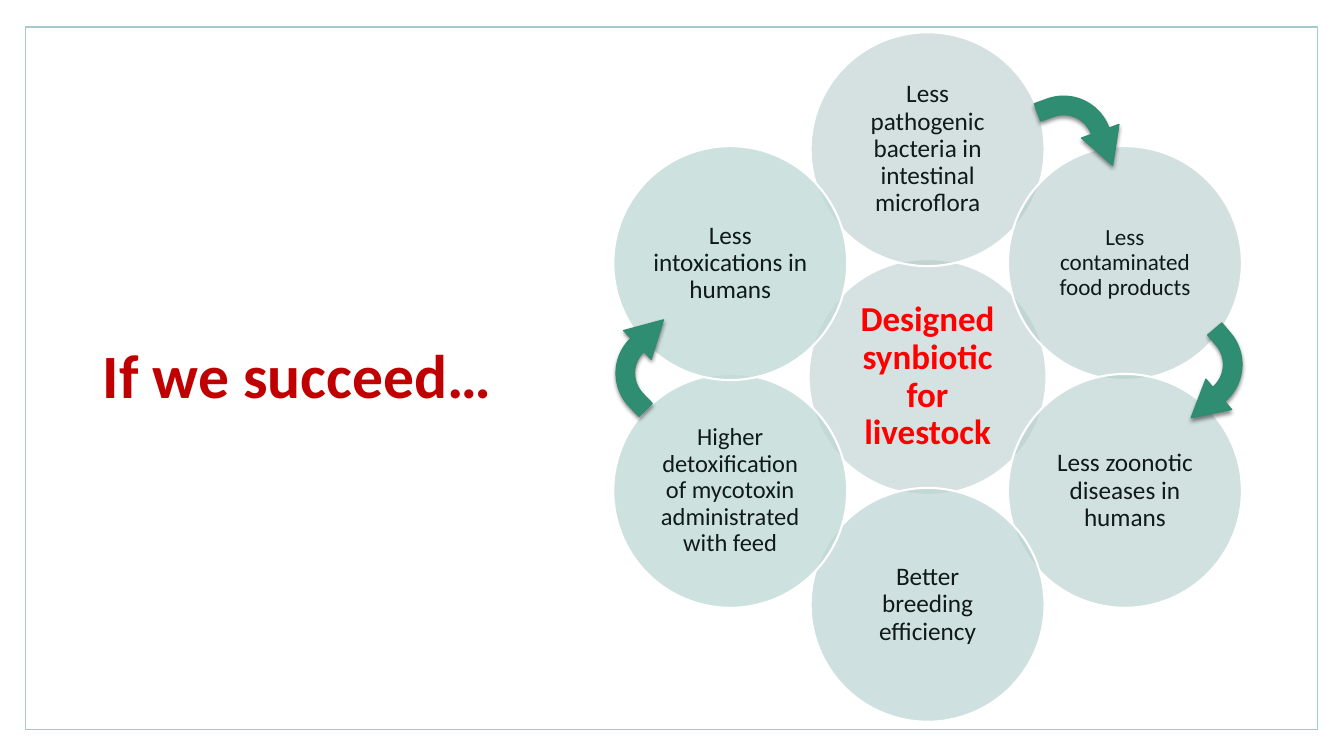
"""Build the slide showing the outcomes of a designed synbiotic for livestock."""
from math import cos, radians, sin

from lxml.etree import SubElement
from pptx import Presentation
from pptx.dml.color import RGBColor
from pptx.enum.shapes import MSO_SHAPE as Preset
from pptx.enum.text import MSO_ANCHOR as Anchor, PP_ALIGN as Align
from pptx.oxml import parse_xml
from pptx.oxml.ns import nsdecls, qn
from pptx.util import Inches, Pt

TITLE = "If we succeed…"
HUB = "Designed synbiotic for livestock"
OUTCOMES = [
    ("Less pathogenic bacteria in intestinal microflora", 18, "B1CAC8"),
    ("Less contaminated food products", 16.5, "B4CDCB"),
    ("Less zoonotic diseases in humans", 18, "B7D1CF"),
    ("Better breeding efficiency", 18, "BAD4D2"),
    ("Higher detoxification of mycotoxin administrated with feed", 17.5, "BDD7D5"),
    ("Less intoxications in humans", 18, "C1DAD8"),
]
ARROWS = [(10.32, 0.94, 70), (11.61, 3.39, 139.8), (5.97, 3.22, 316.1)]
ARROW_BENDS = (0.257, 0.276, 0.5, 0.665)

THEME = {
    "font": "Calibri", "title": "C00000", "title_size": 44,
    "hub": "AEC6C4", "hub_text": "FF0000", "hub_size": 25,
    "text": "0F1A19", "outline": "FFFFFF", "frame": "A6CAC8",
    "arrow": "2F8D72", "arrow_line": "318B71",
}
CENTER_X, CENTER_Y = 9.2, 3.74
RING_RADIUS, PETAL, HUB_SIZE = 2.26, 2.32, (2.36, 2.34)
SHADOW = (
    f'<a:effectLst {nsdecls("a")}><a:outerShdw blurRad="{Pt(3)}" dist="{Pt(2)}" '
    'dir="5400000" rotWithShape="0"><a:srgbClr val="000000">'
    '<a:alpha val="45000"/></a:srgbClr></a:outerShdw></a:effectLst>'
)


def color(name):
    return RGBColor.from_string(name)


def write(frame, words, size, ink, bold, align):
    frame.text = words
    frame.word_wrap = True
    frame.vertical_anchor = Anchor.MIDDLE
    paragraph = frame.paragraphs[0]
    paragraph.alignment = align
    paragraph.line_spacing = 0.9
    font = paragraph.runs[0].font
    font.name, font.size, font.bold = THEME["font"], Pt(size), bold
    font.color.rgb = color(ink)


def add_outlined(slide, preset, box, line, width):
    outlined = slide.shapes.add_shape(preset, *map(Inches, box))
    outlined.shadow.inherit = False
    outlined.line.color.rgb = color(line)
    outlined.line.width = Pt(width)
    return outlined


def add_circle(slide, x, y, size, fill, opacity, words, type_size, ink, bold=False):
    width, height = size
    box = (x - width / 2, y - height / 2, width, height)
    circle = add_outlined(slide, Preset.OVAL, box, THEME["outline"], 1.5)
    circle.fill.solid()
    circle.fill.fore_color.rgb = color(fill)
    tint = circle.fill._xPr.find(qn("a:solidFill"))[0]
    SubElement(tint, qn("a:alpha")).set("val", str(opacity * 1000))
    frame = circle.text_frame
    frame.margin_left = frame.margin_right = Inches(0.03)
    frame.margin_top = frame.margin_bottom = Inches(0.03)
    write(frame, words, type_size, ink, bold, Align.CENTER)


def add_arrow(slide, left, top, turn):
    box = (left, top, 0.84, 0.72)
    arrow = add_outlined(slide, Preset.BENT_ARROW, box, THEME["arrow_line"], 0.79)
    arrow.rotation = turn
    for index, bend in enumerate(ARROW_BENDS):
        arrow.adjustments[index] = bend
    arrow.fill.solid()
    arrow.fill.fore_color.rgb = color(THEME["arrow"])
    properties = arrow._element.spPr
    properties.replace(properties.find(qn("a:effectLst")), parse_xml(SHADOW))


def main():
    deck = Presentation()
    deck.slide_width, deck.slide_height = Inches(13.33), Inches(7.5)
    slide = deck.slides.add_slide(deck.slide_layouts[5])

    title = slide.shapes.title
    title.left, title.top = Inches(0.92), Inches(3.03)
    title.width, title.height = Inches(11.5), Inches(1.45)
    write(title.text_frame, TITLE, THEME["title_size"], THEME["title"], True, Align.LEFT)

    border = add_outlined(
        slide, Preset.RECTANGLE, (0.25, 0.27, 12.82, 6.97), THEME["frame"], 1)
    border.fill.background()

    add_circle(slide, CENTER_X, CENTER_Y, HUB_SIZE, THEME["hub"], 50,
               HUB, THEME["hub_size"], THEME["hub_text"], True)
    for index, (outcome, type_size, fill) in enumerate(OUTCOMES):
        angle = radians(index * 360 / len(OUTCOMES))
        x = CENTER_X + RING_RADIUS * sin(angle)
        y = CENTER_Y - RING_RADIUS * cos(angle)
        add_circle(slide, x, y, (PETAL, PETAL), fill, 55 + 5 * index,
                   outcome, type_size, THEME["text"])

    for left, top, turn in ARROWS:
        add_arrow(slide, left, top, turn)
    deck.save("out.pptx")


if __name__ == "__main__":
    main()
